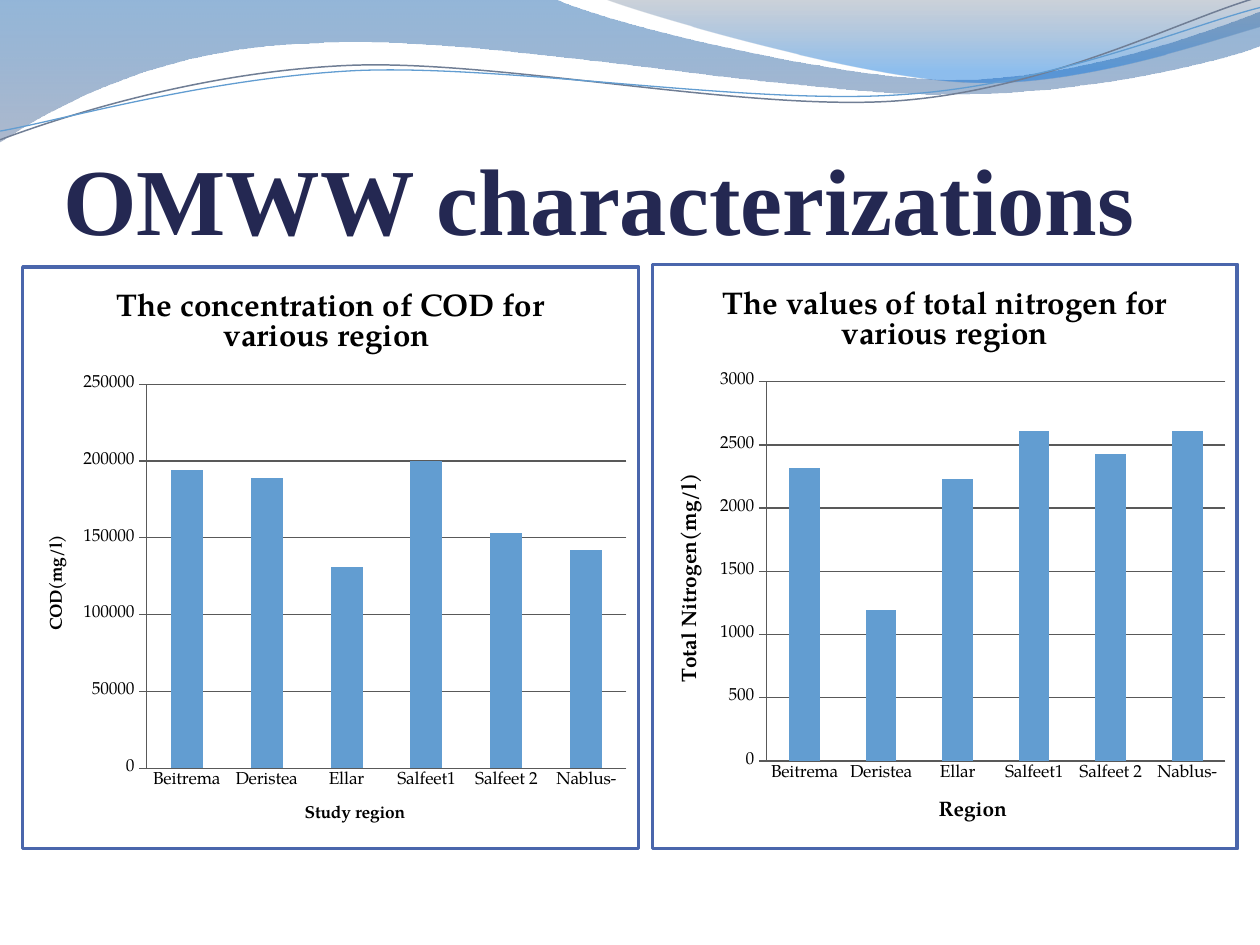
"""Build a slide with two column charts on olive mill wastewater under a wave banner."""
from dataclasses import dataclass

from lxml.etree import SubElement
from pptx import Presentation
from pptx.chart.data import CategoryChartData
from pptx.dml.color import RGBColor
from pptx.enum.chart import XL_CHART_TYPE as ChartType, XL_TICK_MARK as Tick
from pptx.enum.text import MSO_ANCHOR as Anchor, PP_ALIGN as Align
from pptx.oxml import parse_xml
from pptx.oxml.ns import nsdecls, qn
from pptx.util import Pt


def color(code):
    return RGBColor.from_string(code)


def pairs(step):
    return [(Pt(x), Pt(y)) for x, y in zip(step[::2], step[1::2])]


@dataclass
class Deck:
    """Style of the deck and the slide being filled."""
    slide: object
    chart_font: str = "TeX Gyre Pagella"
    title_font: str = "Times New Roman"
    ink: str = "000000"
    title_ink: str = "242852"
    accent: str = "629DD1"
    border: str = "4A66AC"
    grid: str = "595959"

    def outline(self, start, steps, close):
        """Draw line steps (two numbers) and cubic steps (six numbers)."""
        builder = self.slide.shapes.build_freeform(*pairs(start)[0], scale=1.0)
        for step in steps:
            builder.add_line_segments(pairs(step), close=False)
        if close:
            builder.add_line_segments([], close=True)
        shape = builder.convert_to_shape()
        shape.shadow.inherit = False
        segments = iter(list(shape.element.iter(qn("a:lnTo"))))
        for step in steps:
            first = next(segments)
            if len(step) == 6:
                first.tag = qn("a:cubicBezTo")
                for segment in (next(segments), next(segments)):
                    first.append(segment[0])
                    segment.getparent().remove(segment)
        return shape

    def wave(self, start, steps, stops):
        shape = self.outline(start, steps, True)
        shape.line.fill.background()
        shape.fill.gradient()
        shape.fill.gradient_angle = 270
        for stop, (position, code, _) in zip(shape.fill.gradient_stops, stops):
            stop.position = position
            stop.color.rgb = color(code)
        fills = shape.element.spPr.iter(qn("a:srgbClr"))
        for fill, (_, _, alpha) in zip(fills, stops):
            SubElement(fill, qn("a:alpha")).set("val", str(alpha * 1000))

    def strand(self, start, steps, code, width):
        shape = self.outline(start, steps, False)
        shape.fill.background()
        shape.line.color.rgb = color(code)
        shape.line.width = Pt(width)

    def title(self, text, left, top, width, height):
        title = self.slide.shapes.title
        title.left, title.top, title.width, title.height = map(Pt, (left, top, width, height))
        frame = title.text_frame
        frame.text = text
        frame.word_wrap = True
        frame.vertical_anchor = Anchor.BOTTOM
        frame.margin_left = frame.margin_right = frame.margin_bottom = 0
        frame.margin_top = Pt(3.6)
        heading = frame.paragraphs[0]
        heading.alignment = Align.LEFT
        self.set_font(heading.font, 54, True, self.title_font, self.title_ink)
        title.element.getparent().append(title.element)

    def set_font(self, font, size, bold=False, name=None, ink=None):
        font.name = name or self.chart_font
        font.size = Pt(size)
        font.bold = bold
        font.color.rgb = color(ink or self.ink)

    def caption(self, heading, text, size):
        heading.text_frame.text = text
        self.set_font(heading.text_frame.paragraphs[0].font, size, True)

    def columns(self, box, heading, regions, values, axis_names, axis_size, top, step):
        data = CategoryChartData()
        data.categories = regions
        data.add_series("Series 1", values)
        chart = self.slide.shapes.add_chart(
            ChartType.COLUMN_CLUSTERED, *map(Pt, box), data).chart
        self.set_font(chart.font, 10)
        chart.has_legend = False
        chart.has_title = True
        self.caption(chart.chart_title, heading, 18)
        chart.chart_title.include_in_layout = False

        plot = chart.plots[0]
        plot.gap_width = 150
        plot.vary_by_categories = False
        bars = plot.series[0].format.fill
        bars.solid()
        bars.fore_color.rgb = color(self.accent)

        scale = chart.value_axis
        scale.minimum_scale, scale.maximum_scale, scale.major_unit = 0, top, step
        scale.has_major_gridlines = True
        for axis, name, tick in zip((chart.category_axis, scale), axis_names,
                                    (Tick.NONE, Tick.OUTSIDE)):
            self.caption(axis.axis_title, name, axis_size)
            axis.major_tick_mark = tick
            axis.minor_tick_mark = Tick.NONE
        for part in (chart.category_axis, scale, scale.major_gridlines):
            part.format.line.color.rgb = color(self.grid)
            part.format.line.width = Pt(0.75)
        chart.element.find(qn("c:chart")).addnext(parse_xml(
            f'<c:spPr {nsdecls("c", "a")}><a:solidFill><a:srgbClr val="FFFFFF"/></a:solidFill>'
            f'<a:ln w="{Pt(2)}"><a:solidFill><a:srgbClr val="{self.border}"/></a:solidFill>'
            '</a:ln></c:spPr>'))


def main():
    deck = Presentation()
    deck.slide_width, deck.slide_height = Pt(720), Pt(540)
    page = Deck(deck.slides.add_slide(deck.slide_layouts[5]))

    page.wave((0, 0), [
        (316.8, -0.7), (342.7, 12.2, 478.1, 45.4, 545.8, 45.4),
        (614.2, 45.4, 689.8, 18.7, 720, 6.5), (720.7, 25.9),
        (707.8, 31.7, 626.4, 54.7, 537.1, 54), (447.8, 54, 275, 20.2, 185, 24.5),
        (92.9, 25.9, 33.1, 59.8, -0.7, 81.4),
    ], [(0, "125EAA", 45), (1, "697FA4", 55)])
    page.wave((344.9, -0.7), [
        (366.5, 7.9, 491, 44.6, 553.7, 46.8), (616.3, 49.7, 691.9, 23, 720, 15.1), (720, 0),
    ], [(0, "596982", 30), (0.8, "0670DA", 45)])
    page.strand((0, 79.9), [
        (34.6, 67, 113.8, 41, 199.4, 37.4), (284.4, 33.8, 427, 64.1, 513.4, 57.6),
        (599.8, 51.1, 675.4, 10.8, 718.6, -1.4),
    ], "707E95", 0.85)
    page.strand((0, 74.9), [
        (33.8, 69.1, 118.1, 44.6, 203.8, 40.3), (290.2, 36.7, 429.8, 60.5, 516.2, 54),
        (601.9, 48.2, 677.5, 15.1, 720, 4.3),
    ], page.accent, 0.75)

    page.title("OMWW characterizations", 36, 55.5, 648, 90)
    regions = ["Beitrema", "Deristea", "Ellar", "Salfeet1", "Salfeet 2", "Nablus-"]
    page.columns((12, 151.5, 354, 334.5),
                 "The concentration of COD for various region ", regions,
                 [194000, 189000, 131000, 200000, 153000, 142000],
                 ("Study region", "COD(mg/l)"), 10, 250000, 50000)
    page.columns((372, 150, 336, 336),
                 "The values of total nitrogen for various region", regions,
                 [2320, 1190, 2230, 2610, 2430, 2610],
                 ("Region", "Total Nitrogen(mg/l)"), 12, 3000, 500)
    deck.save("out.pptx")


if __name__ == "__main__":
    main()
